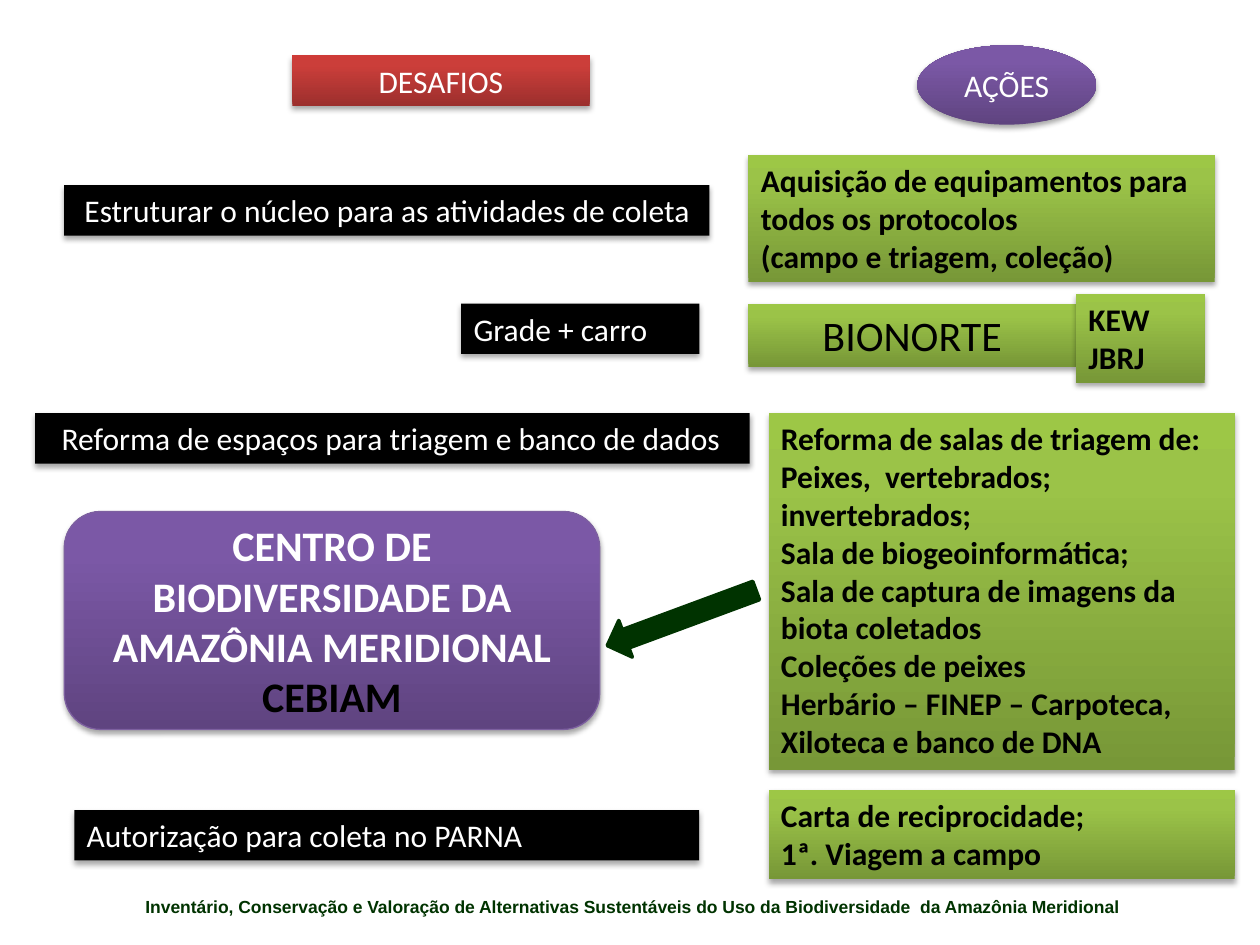
from copy import deepcopy

from lxml import etree
from pptx import Presentation
from pptx.dml.color import RGBColor
from pptx.enum.shapes import MSO_SHAPE
from pptx.enum.text import MSO_ANCHOR, MSO_AUTO_SIZE, PP_ALIGN
from pptx.oxml.ns import qn
from pptx.util import Inches, Pt

RECT, ELLIPSE = MSO_SHAPE.RECTANGLE, MSO_SHAPE.OVAL
ROUNDED, ARROW = MSO_SHAPE.ROUNDED_RECTANGLE, MSO_SHAPE.RIGHT_ARROW
TOP, MIDDLE = MSO_ANCHOR.TOP, MSO_ANCHOR.MIDDLE
LEFT, CENTER = PP_ALIGN.LEFT, PP_ALIGN.CENTER
GROW, FIXED = MSO_AUTO_SIZE.SHAPE_TO_FIT_TEXT, MSO_AUTO_SIZE.NONE

BLACK, WHITE, FOREST = "000000", "FFFFFF", "003300"
GREEN = ("779737", "9BC348", "9DC746")
PURPLE = ("5F4480", "7B58A6", "7C57A8")
RED = ("9C2F2D", "CB3E3A", "CE3B37")
STOP_POSITIONS = (0, 0.8, 1)
ACTION_WIDTH = 3.7


def color(value):
    return RGBColor.from_string(value)


class Board:
    def __init__(self, slide):
        self.slide = slide
        self.body = {"name": "Calibri", "size": Pt(18), "bold": False}

    def set_text(self, frame, lines, ink, align=LEFT, inset=0.1, layout=None, **font):
        frame_format = {"word_wrap": True, "auto_size": GROW, "vertical_anchor": TOP,
                        "margin_left": Inches(inset), **(layout or {})}
        for attribute, value in frame_format.items():
            setattr(frame, attribute, value)
        inks = ink if isinstance(ink, tuple) else (ink,) * len(lines)
        for index, (line, line_ink) in enumerate(zip(lines, inks)):
            paragraph = frame.add_paragraph() if index else frame.paragraphs[0]
            paragraph.alignment = align
            run = paragraph.add_run()
            run.text = line
            for attribute, value in {**self.body, **font}.items():
                setattr(run.font, attribute, value)
            run.font.color.rgb = color(line_ink)

    def paint(self, shape, fill):
        if isinstance(fill, str):
            shape.fill.solid()
            shape.fill.fore_color.rgb = color(fill)
            return
        shape.fill.gradient()
        shape.fill.gradient_angle = 90
        stop_list = shape._element.spPr.find(qn("a:gradFill")).find(qn("a:gsLst"))
        stop_list.append(deepcopy(stop_list[-1]))
        for stop, position, tone in zip(shape.fill.gradient_stops, STOP_POSITIONS, fill):
            stop.position = position
            stop.color.rgb = color(tone)

    def outline(self, shape, tone, width):
        shape.line.color.rgb = color(tone)
        shape.line.width = Pt(width)

    def cast_shadow(self, shape):
        effects = shape._element.spPr.find(qn("a:effectLst"))
        shadow = etree.SubElement(effects, qn("a:outerShdw"), blurRad="40000",
                                  dist="23000", dir="5400000", rotWithShape="0")
        tone = etree.SubElement(shadow, qn("a:srgbClr"), val=BLACK)
        etree.SubElement(tone, qn("a:alpha"), val="35000")

    def shape(self, kind, place, fill):
        shape = self.slide.shapes.add_shape(kind, *map(Inches, place))
        shape.shadow.inherit = False
        self.paint(shape, fill)
        shape.line.fill.background()
        return shape

    def panel(self, place, fill, lines, ink, kind=RECT, **text):
        panel = self.shape(kind, place, fill)
        self.cast_shadow(panel)
        self.set_text(panel.text_frame, lines, ink, **text)
        return panel

    def challenge(self, place, line, inset=0.1):
        return self.panel((*place, 0.4), BLACK, [line], WHITE, inset=inset)

    def action(self, place, lines):
        return self.panel(place, GREEN, lines, BLACK, bold=True)

    def arrow(self, place, tone, rotation):
        arrow = self.shape(ARROW, place, tone)
        self.outline(arrow, tone, 2)
        arrow.rotation = rotation

    def caption(self, place, line, ink, **font):
        box = self.slide.shapes.add_textbox(*map(Inches, place))
        self.set_text(box.text_frame, [line], ink, CENTER, **font)


def main():
    deck = Presentation()
    deck.slide_width, deck.slide_height = Inches(10), Inches(7.5)
    board = Board(deck.slides.add_slide(deck.slide_layouts[6]))
    centered = {"auto_size": FIXED, "vertical_anchor": MIDDLE}

    board.caption((0.27, 7.06, 9.49, 0.27),
                  "Inventário, Conservação e Valoração de Alternativas Sustentáveis "
                  "do Uso da Biodiversidade  da Amazônia Meridional",
                  FOREST, name="Arial", size=Pt(10), bold=True)

    board.panel((7.28, 0.36, 1.42, 0.63), PURPLE, ["AÇÕES"], WHITE, ELLIPSE,
                align=CENTER, layout=centered)
    board.panel((2.32, 0.44, 2.36, 0.4), RED, ["DESAFIOS"], WHITE, align=CENTER)

    board.challenge((0.51, 1.47, 5.12),
                    "Estruturar o núcleo para as atividades de coleta", 0.16)
    board.challenge((3.66, 2.41, 1.89), "Grade + carro")
    board.challenge((0.28, 3.28, 5.67),
                    "Reforma de espaços para triagem e banco de dados", 0.21)
    board.challenge((0.59, 6.43, 4.96), "Autorização para coleta no PARNA")

    board.action((5.94, 1.23, ACTION_WIDTH, 1.01), [
        "Aquisição de equipamentos para todos os protocolos",
        "(campo e triagem, coleção)",
    ])
    board.panel((5.94, 2.41, 2.6, 0.5), GREEN, ["BIONORTE"], BLACK,
                align=CENTER, size=Pt(24))
    board.action((8.54, 2.33, 1.02, 0.71), ["KEW", "JBRJ"])
    board.action((6.1, 3.28, ACTION_WIDTH, 2.83), [
        "Reforma de salas de triagem de: Peixes,  vertebrados; invertebrados;",
        "Sala de biogeoinformática;",
        "Sala de captura de imagens da biota coletados",
        "Coleções de peixes",
        "Herbário – FINEP – Carpoteca, Xiloteca e banco de DNA",
    ])
    board.action((6.1, 6.27, ACTION_WIDTH, 0.71), [
        "Carta de reciprocidade;",
        "1ª. Viagem a campo",
    ])

    board.arrow((4.78, 4.75, 1.26, 0.31), FOREST, 159.7)
    center = board.panel((0.51, 4.06, 4.25, 1.73), PURPLE,
                         ["CENTRO DE BIODIVERSIDADE DA AMAZÔNIA MERIDIONAL", "CEBIAM"],
                         (WHITE, BLACK), ROUNDED, align=CENTER, layout=centered,
                         size=Pt(24), bold=True)
    board.outline(center, "7D60A0", 0.75)

    deck.save("out.pptx")


if __name__ == "__main__":
    main()
